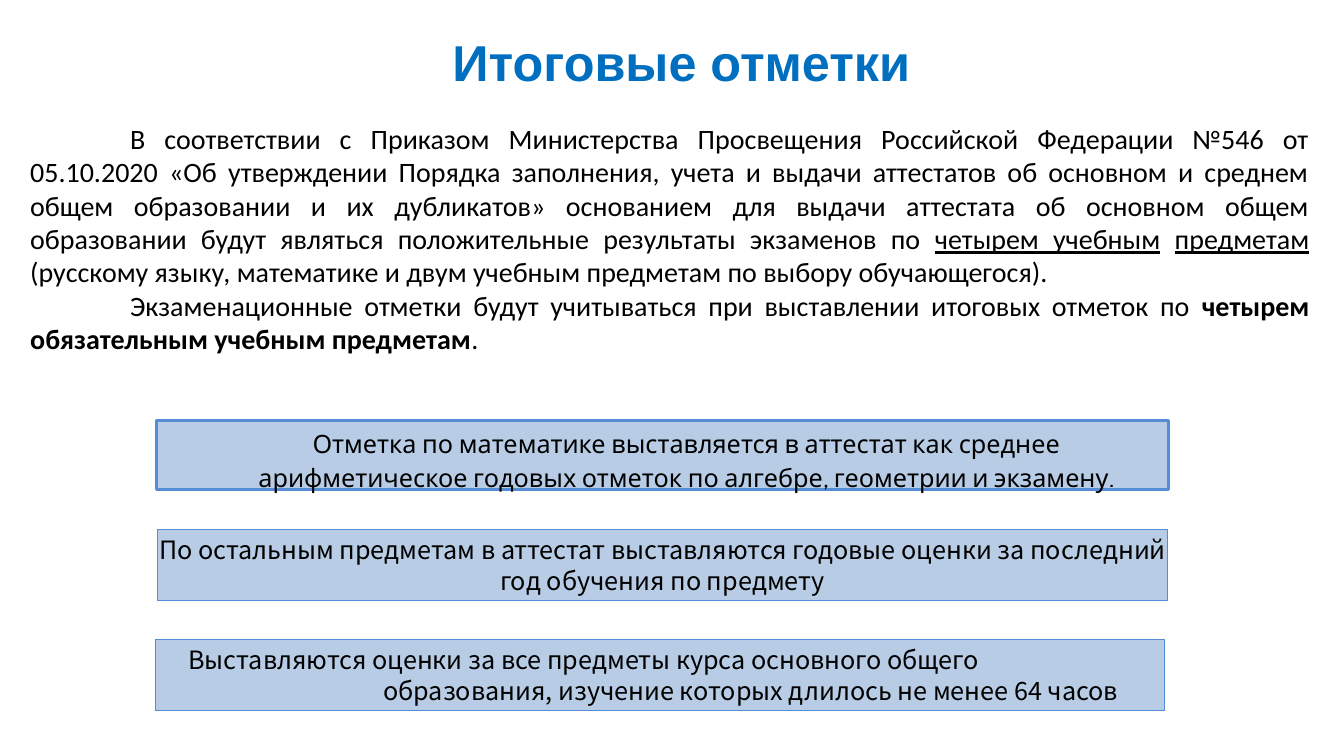
from dataclasses import dataclass

from pptx import Presentation
from pptx.dml.color import RGBColor
from pptx.enum.shapes import MSO_SHAPE
from pptx.enum.text import MSO_ANCHOR, PP_ALIGN
from pptx.util import Pt


@dataclass(frozen=True)
class Theme:
    heading: RGBColor = RGBColor(0x00, 0x6F, 0xC0)
    ink: RGBColor = RGBColor(0x00, 0x00, 0x00)
    panel: RGBColor = RGBColor(0xB8, 0xCD, 0xE5)
    border: RGBColor = RGBColor(0x54, 0x8D, 0xD5)
    heading_size: int = 36
    body_size: int = 20
    rule_size: int = 18


THEME = Theme()
HEADING = {"name": "Arial", "size": Pt(THEME.heading_size), "bold": True}
BODY = {"name": "Calibri", "size": Pt(THEME.body_size)}
MATH_RULE = {"name": "Cabin", "size": Pt(THEME.rule_size)}
OTHER_RULE = {"name": "Noto Sans CJK KR", "size": Pt(THEME.rule_size)}
UNDERLINED = {"underline": True}
BOLD = {"bold": True}

ORDER_TEXT = [
    ("В соответствии с Приказом Министерства Просвещения Российской Федерации "
     "№546 от 05.10.2020 «Об утверждении Порядка заполнения, учета и выдачи "
     "аттестатов об основном и среднем общем образовании и их дубликатов» "
     "основанием для выдачи аттестата об основном общем образовании будут "
     "являться положительные результаты экзаменов по ", {}),
    ("четырем учебным", UNDERLINED),
    (" ", {}),
    ("предметам", UNDERLINED),
    (" (русскому языку, математике и двум учебным предметам по выбору "
     "обучающегося).", {}),
]
EXAM_TEXT = [
    ("Экзаменационные отметки будут учитываться при выставлении итоговых "
     "отметок по ", {}),
    ("четырем обязательным учебным предметам", BOLD),
    (".", {}),
]
MATH_LINES = [
    "Отметка по математике выставляется в аттестат как среднее",
    "арифметическое годовых отметок по алгебре, геометрии и экзамену.",
]
SUBJECT_LINES = [
    "По остальным предметам в аттестат выставляются годовые оценки за последний",
    "год обучения по предмету",
]
COURSE_LINES = [
    "Выставляются оценки за все предметы курса основного общего "
    "образования, изучение которых длилось не менее 64 часов",
]


def apply_format(target, values):
    for attribute, value in values.items():
        setattr(target, attribute, value)


def prepare_frame(frame, top_inset):
    apply_format(frame, {
        "word_wrap": True, "vertical_anchor": MSO_ANCHOR.TOP,
        "margin_left": 0, "margin_right": 0,
        "margin_top": Pt(top_inset), "margin_bottom": 0,
    })


def write_paragraphs(frame, paragraphs, font, color, layout, margins):
    for index, pieces in enumerate(paragraphs):
        paragraph = frame.paragraphs[0] if index == 0 else frame.add_paragraph()
        apply_format(paragraph, layout)
        properties = paragraph._p.get_or_add_pPr()
        for name, length in margins.items():
            properties.set(name, str(Pt(length)))
        for text, emphasis in pieces:
            run = paragraph.add_run()
            run.text = text
            apply_format(run.font, {**font, **emphasis})
            run.font.color.rgb = color


def add_text(slide, bounds, top_inset, paragraphs, font, color, layout, margins):
    frame = slide.shapes.add_textbox(*map(Pt, bounds)).text_frame
    prepare_frame(frame, top_inset)
    write_paragraphs(frame, paragraphs, font, color, layout, margins)


def add_rule(slide, bounds, border_width, lines, font, layout, margins):
    panel = slide.shapes.add_shape(MSO_SHAPE.RECTANGLE, *map(Pt, bounds))
    panel.shadow.inherit = False
    panel.fill.solid()
    panel.fill.fore_color.rgb = THEME.panel
    panel.line.color.rgb = THEME.border
    panel.line.width = Pt(border_width)
    prepare_frame(panel.text_frame, 3.5)
    paragraphs = [[(line, {})] for line in lines]
    write_paragraphs(panel.text_frame, paragraphs, font, THEME.ink, layout, margins)


def main():
    deck = Presentation()
    deck.slide_width, deck.slide_height = Pt(960), Pt(540)
    slide = deck.slides.add_slide(deck.slide_layouts[6])

    add_text(slide, (55.4, -0.7, 838, 78.5), 23, [[("Итоговые отметки", {})]],
             HEADING, THEME.heading,
             {"alignment": PP_ALIGN.LEFT, "space_before": Pt(1)},
             {"marL": 267.8})
    add_text(slide, (20.9, 87.1, 914.4, 170), 0.7, [ORDER_TEXT, EXAM_TEXT],
             BODY, THEME.ink,
             {"alignment": PP_ALIGN.JUSTIFY, "line_spacing": 0.99},
             {"marL": 0.7, "indent": 71.3})

    centered = {"alignment": PP_ALIGN.CENTER}
    tight = {"line_spacing": Pt(22)}
    add_rule(slide, (111.6, 300.2, 722.9, 49.7), 1.92, MATH_LINES, MATH_RULE,
             {**centered, "line_spacing": Pt(24)}, {"marL": 34.6})
    add_rule(slide, (112.3, 378, 721.4, 51.1), 0.72, SUBJECT_LINES, OTHER_RULE,
             {**centered, **tight}, {"marL": 0.7})
    add_rule(slide, (110.9, 456.5, 720.7, 51.1), 0.72, COURSE_LINES, OTHER_RULE,
             {"alignment": PP_ALIGN.LEFT, **tight},
             {"marL": 162.7, "indent": -139, "marR": 22})

    deck.save("out.pptx")


if __name__ == "__main__":
    main()
